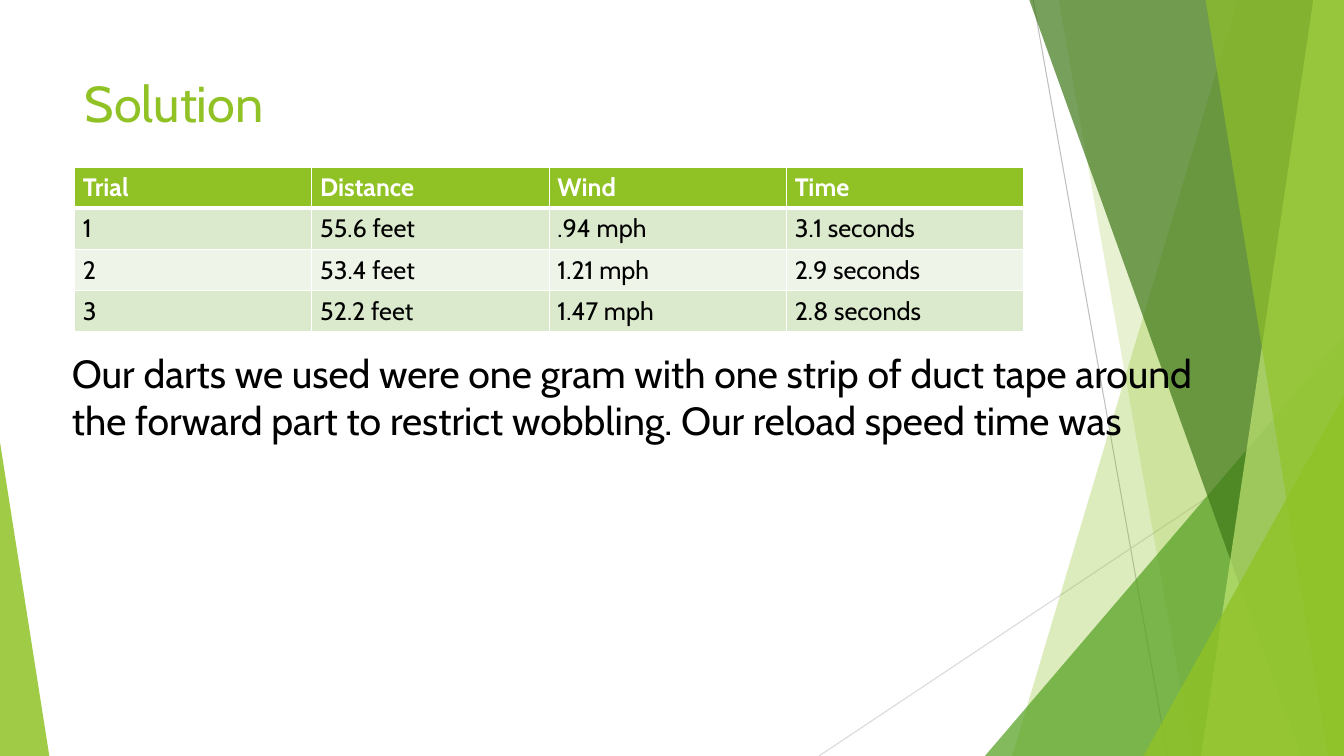
"""Build the Solution slide: a trial table beside green facets."""
from lxml.etree import SubElement as sub
from pptx import Presentation
from pptx.dml.color import RGBColor as RGB
from pptx.enum.shapes import MSO_CONNECTOR as CON, MSO_SHAPE as SHP
from pptx.enum.text import MSO_ANCHOR as ANC, PP_ALIGN as ALI
from pptx.oxml.ns import qn
from pptx.util import Emu, Pt

PX = 9525
WIDE, HIGH = 1280, 720
FONT = "Cabin"
HUES = {
    "lime": "90C226", "green": "54A021", "dark": "3F7819", "pale": "C0E474",
    "band": "DBE9CD", "light": "EEF4E8", "white": "FFFFFF", "black": "000000",
    "grey": "BFBFBF", "mist": "D9D9D9",
}
ROWS = [
    ("Trial", "Distance", "Wind", "Time"),
    ("1", "55.6 feet", ".94 mph", "3.1 seconds"),
    ("2", "53.4 feet", "1.21 mph", "2.9 seconds"),
    ("3", "52.2 feet", "1.47 mph", "2.8 seconds"),
]
NOTE = ("Our darts we used were one gram with one strip of duct tape around "
        "the forward part to restrict wobbling. Our reload speed time was")


def px(*nums):
    return [Emu(num * PX) for num in nums]


def hue(name):
    return RGB.from_string(HUES[name])


def tint(shape, name, alpha):
    shape.shadow.inherit = False
    shape.line.fill.background()
    shape.fill.solid()
    shape.fill.fore_color.rgb = hue(name)
    clr = shape.fill._xPr.find(".//" + qn("a:srgbClr"))
    sub(clr, qn("a:alpha"), val=str(alpha * 1000))


def facet(slide, top, base, name, alpha):
    pen = slide.shapes.build_freeform(top, -1, scale=PX)
    pen.add_line_segments([(WIDE, -1), (WIDE, HIGH), (base, HIGH)], close=True)
    tint(pen.convert_to_shape(), name, alpha)


def wedge(slide, left, top, width, peak, name, alpha):
    box = px(left, top, width, HIGH - top)
    shape = slide.shapes.add_shape(SHP.ISOSCELES_TRIANGLE, *box)
    shape.adjustments[0] = peak
    tint(shape, name, alpha)


def rule(slide, ends, name):
    line = slide.shapes.add_connector(CON.STRAIGHT, *px(*ends))
    line.line.color.rgb = hue(name)
    line.line.width = Pt(0.75)
    sub(line._element.spPr, qn("a:effectLst"))


def write(frame, text, size, name, bold=False):
    frame.word_wrap = True
    para = frame.paragraphs[0]
    para.alignment = ALI.LEFT
    run = para.add_run()
    run.text = text
    run.font.name = FONT
    run.font.size = Pt(size)
    run.font.bold = bold
    run.font.color.rgb = hue(name)


def edge(cell, row):
    sides = {"L": 1, "R": 1, "T": 3 if row == 1 else 1, "B": 1 if row else 3}
    props = cell._tc.get_or_add_tcPr()
    for side, size in sides.items():
        line = sub(props, qn("a:ln" + side), w=str(Pt(size)))
        fill = sub(line, qn("a:solidFill"))
        sub(fill, qn("a:srgbClr"), val=HUES["white"])


def grid(slide, left, top, col, row):
    size = len(ROWS), len(ROWS[0])
    box = px(left, top, col * size[1], row * size[0])
    table = slide.shapes.add_table(*size, *box).table
    for r, words in enumerate(ROWS):
        for c, word in enumerate(words):
            cell = table.cell(r, c)
            cell.margin_left, cell.margin_right = px(8, 8)
            cell.margin_top, cell.margin_bottom = px(5, 5)
            edge(cell, r)
            cell.fill.solid()
            shade = ("light", "band")[r % 2] if r else "lime"
            cell.fill.fore_color.rgb = hue(shade)
            write(cell.text_frame, word, 18, "black" if r else "white", not r)


def head(slide, text, box):
    title = slide.shapes.title
    title.left, title.top, title.width, title.height = px(*box)
    title.text_frame.vertical_anchor = ANC.TOP
    write(title.text_frame, text, 36, "lime")
    slide.shapes._spTree.append(title._element)


def decor(slide):
    rule(slide, (984, 0, 1112, HIGH), "grey")
    rule(slide, (WIDE, 387, 780, HIGH), "mist")
    facet(slide, 1179, 964, "lime", 30)
    facet(slide, 1008, 1136, "lime", 20)
    wedge(slide, 938, 320, 342, 1, "green", 72)
    facet(slide, 980, 1239, "dark", 70)
    facet(slide, 1251, 1144, "pale", 70)
    facet(slide, 1148, 1265, "lime", 65)
    wedge(slide, 1089, 377, 191, 1, "lime", 80)
    wedge(slide, 0, 421, 47, 0, "lime", 85)


def main():
    deck = Presentation()
    deck.slide_width, deck.slide_height = px(WIDE, HIGH)
    slide = deck.slides.add_slide(deck.slide_layouts[5])
    decor(slide)
    head(slide, "Solution", (71, 64, 902, 138))
    grid(slide, 71, 159, 226, 39)
    note = slide.shapes.add_textbox(*px(59, 328, 1104, 145))
    write(note.text_frame, NOTE, 28, "black")
    deck.save("out.pptx")


if __name__ == "__main__":
    main()
